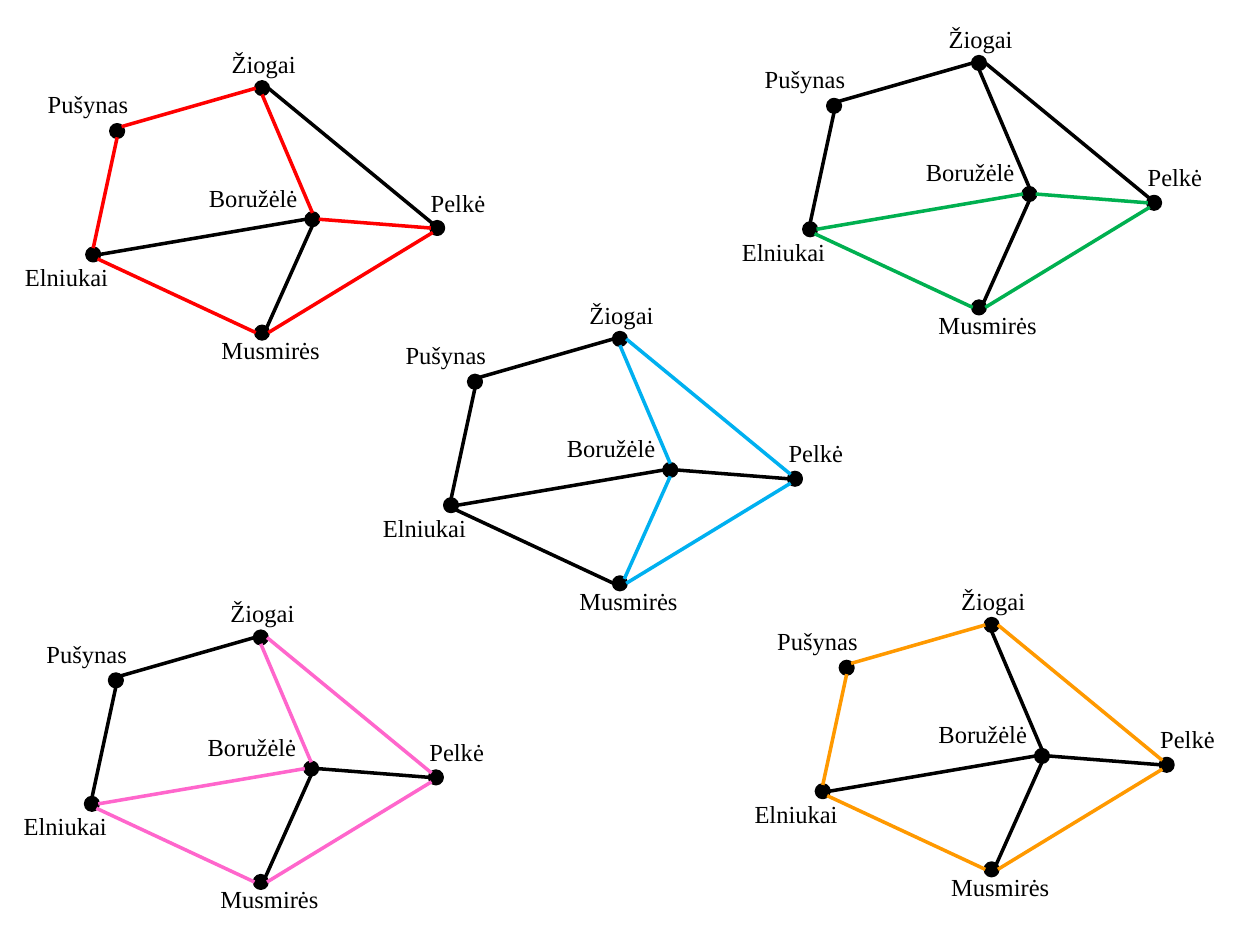
"""Build a slide with five route maps of the same network, each with its own highlighted loop."""
import pptx
import pptx.dml.color
import pptx.enum.shapes
import pptx.enum.text
import pptx.oxml
import pptx.util
from pptx.util import Inches

THEME = {
    "font": "Times New Roman",
    "size": 14,
    "line": 2,
    "black": "000000",
    "red": "FF0000",
    "pink": "FF66CC",
    "green": "00B050",
    "orange": "FF9900",
    "blue": "00B0F0",
}

DOT = 0.1
LABEL_HEIGHT = 0.34

DOTS = {
    "Pušynas": (0.78, 0.65),
    "Žiogai": (1.93, 0.31),
    "Boružėlė": (2.33, 1.35),
    "Elniukai": (0.59, 1.63),
    "Musmirės": (1.93, 2.25),
    "Pelkė": (3.32, 1.42),
}

LABELS = {
    "Žiogai": (1.64, 0, 1.58),
    "Pelkė": (3.22, 1.10, 0.99),
    "Musmirės": (1.56, 2.27, 1.54),
    "Boružėlė": (1.46, 1.06, 0.97),
    "Pušynas": (0.18, 0.32, 1.25),
    "Elniukai": (0, 1.69, 0.86),
}

SITES = {
    "top": (0.5, 0),
    "bottom": (0.5, 1),
    "left": (0, 0.5),
    "right": (1, 0.5),
    "top left": (0.15, 0.15),
    "top right": (0.85, 0.15),
    "bottom left": (0.15, 0.85),
    "bottom right": (0.85, 0.85),
}

ROADS = [
    ("Elniukai", "top", "Pušynas", "bottom"),
    ("Pušynas", "top right", "Žiogai", "left"),
    ("Elniukai", "right", "Boružėlė", "left"),
    ("Boružėlė", "top", "Žiogai", "bottom"),
    ("Elniukai", "bottom right", "Musmirės", "left"),
    ("Žiogai", "right", "Pelkė", "top left"),
    ("Musmirės", "right", "Pelkė", "bottom left"),
    ("Musmirės", "top right", "Boružėlė", "bottom"),
    ("Boružėlė", "right", "Pelkė", "left"),
]

MAPS = [
    ((0.10, 0.34), "red", ["Elniukai", "Pušynas", "Žiogai", "Boružėlė", "Pelkė", "Musmirės"]),
    ((0.09, 4.70), "pink", ["Elniukai", "Boružėlė", "Žiogai", "Pelkė", "Musmirės"]),
    ((5.79, 0.14), "green", ["Elniukai", "Boružėlė", "Pelkė", "Musmirės"]),
    ((5.89, 4.60), "orange", ["Elniukai", "Pušynas", "Žiogai", "Pelkė", "Musmirės"]),
    ((2.94, 2.33), "blue", ["Musmirės", "Boružėlė", "Žiogai", "Pelkė"]),
]


def color(name):
    return pptx.dml.color.RGBColor.from_string(THEME[name])


def set_values(target, values):
    for name, value in values.items():
        setattr(target, name, value)


def style_line(shape, color_name):
    shape.line.color.rgb = color(color_name)
    shape.line.width = pptx.util.Pt(THEME["line"])


def add_dot(group, left, top):
    dot = group.shapes.add_shape(
        pptx.enum.shapes.MSO_SHAPE.OVAL, Inches(left), Inches(top), Inches(DOT), Inches(DOT))
    dot.shadow.inherit = False
    dot.fill.solid()
    dot.fill.fore_color.rgb = color("black")
    style_line(dot, "black")


def site_point(origin, place, site):
    return [Inches(start + offset + DOT * share)
            for start, offset, share in zip(origin, DOTS[place], SITES[site])]


def add_road(group, begin, end, color_name):
    road = group.shapes.add_connector(
        pptx.enum.shapes.MSO_CONNECTOR.STRAIGHT, *begin, *end)
    style_line(road, color_name)
    road._element.spPr.append(pptx.oxml.parse_xml(
        '<a:effectLst xmlns:a="http://schemas.openxmlformats.org/drawingml/2006/main"/>'))


def add_label(group, text, left, top, width):
    box = group.shapes.add_textbox(
        Inches(left), Inches(top), Inches(width), Inches(LABEL_HEIGHT))
    set_values(box.text_frame, {
        "text": text,
        "word_wrap": True,
        "auto_size": pptx.enum.text.MSO_AUTO_SIZE.SHAPE_TO_FIT_TEXT,
    })
    font = box.text_frame.paragraphs[0].runs[0].font
    set_values(font, {"name": THEME["font"], "size": pptx.util.Pt(THEME["size"])})
    font.color.rgb = color("black")


def add_map(slide, origin, loop_color, loop):
    group = slide.shapes.add_group_shape()
    x, y = origin
    loop_roads = [{start, end} for start, end in zip(loop, loop[1:] + loop[:1])]
    for left, top in DOTS.values():
        add_dot(group, x + left, y + top)
    for start, start_site, end, end_site in ROADS:
        road_color = loop_color if {start, end} in loop_roads else "black"
        add_road(group, site_point(origin, start, start_site),
                 site_point(origin, end, end_site), road_color)
    for text, (left, top, width) in LABELS.items():
        add_label(group, text, x + left, y + top, width)


def main():
    presentation = pptx.Presentation()
    set_values(presentation, {"slide_width": Inches(10), "slide_height": Inches(7.5)})
    slide = presentation.slides.add_slide(presentation.slide_layouts[6])
    for origin, loop_color, loop in MAPS:
        add_map(slide, origin, loop_color, loop)
    presentation.save("out.pptx")


if __name__ == "__main__":
    main()
